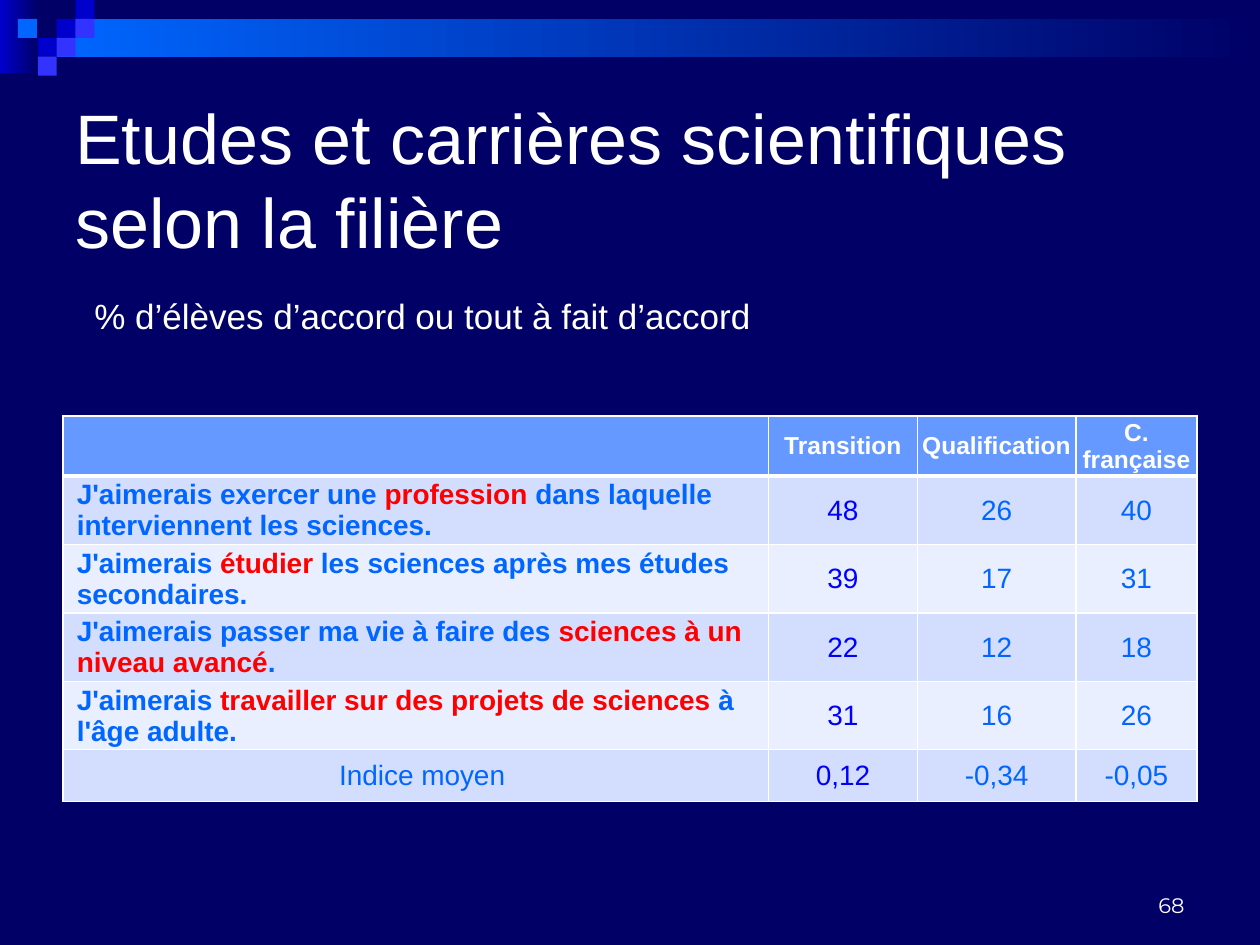
from dataclasses import dataclass

from lxml import etree
from pptx import Presentation
from pptx.dml.color import RGBColor
from pptx.enum.shapes import MSO_SHAPE
from pptx.enum.text import MSO_ANCHOR, PP_ALIGN
from pptx.oxml.ns import qn
from pptx.util import Inches, Pt

RECTANGLE = MSO_SHAPE.RECTANGLE
MIDDLE, BOTTOM = MSO_ANCHOR.MIDDLE, MSO_ANCHOR.BOTTOM
LEFT, CENTER, RIGHT = PP_ALIGN.LEFT, PP_ALIGN.CENTER, PP_ALIGN.RIGHT


@dataclass(frozen=True)
class Theme:
    night: str = "000066"
    navy: str = "0000CC"
    violet: str = "3333FF"
    azure: str = "0066FF"
    white: str = "FFFFFF"
    header: str = "6699FF"
    bands: tuple = ("D3DEFF", "EAEFFF")
    accent: str = "FF0000"
    strong: str = "0000FF"
    font: str = "Arial"
    number_font: str = "Montserrat"
    title_size: int = 40
    subtitle_size: int = 20
    header_size: int = 14
    body_size: int = 16
    number_size: int = 12


THEME = Theme()
WIDTH, HEIGHT = 10, 7.5
MARGIN = 0.05 * WIDTH
CONTENT_WIDTH = WIDTH - 2 * MARGIN
TILE = 0.15

# column, row, colour on the grid of small squares
TILES = [
    (3, 1, THEME.navy), (4, 0, THEME.navy), (4, 1, THEME.violet),
    (2, 2, THEME.navy), (0.95, 1, THEME.azure), (3, 2, THEME.violet),
    (2, 3, THEME.violet),
]

COLUMN_WIDTHS = [5.6, 1.18, 1.26, 0.96]
ROW_HEIGHTS = [0.43] + [0.5] * 4 + [0.41]
HEADINGS = ["Transition", "Qualification", "C. française"]
# statement as (before, highlighted, after), then one value per track
STATEMENTS = [
    (("J'aimerais exercer une ", "profession ",
      "dans laquelle interviennent les sciences."), ["48", "26", "40"]),
    (("J'aimerais ", "étudier",
      " les sciences après mes études secondaires."), ["39", "17", "31"]),
    (("J'aimerais passer ma vie à faire des ",
      "sciences à un niveau avancé", "."), ["22", "12", "18"]),
    (("J'aimerais ", "travailler sur des projets de sciences",
      " à l'âge adulte."), ["31", "16", "26"]),
]
MEAN_LABEL, MEAN_VALUES = "Indice moyen", ["0,12", "-0,34", "-0,05"]


def add_span(para, text, size, color=THEME.white, bold=False, font=THEME.font):
    span = para.add_run()
    span.text = text
    span.font.name = font
    span.font.size = Pt(size)
    span.font.bold = bold
    span.font.color.rgb = RGBColor.from_string(color)


def add_box(slide, left, top, width, height, anchor):
    frame = slide.shapes.add_textbox(
        Inches(left), Inches(top), Inches(width), Inches(height)).text_frame
    frame.word_wrap = True
    frame.vertical_anchor = anchor
    return frame


def add_block(slide, left, top, width, height, *colors):
    """Rectangle with one plain colour, or two for a horizontal gradient."""
    block = slide.shapes.add_shape(
        RECTANGLE, Inches(left), Inches(top), Inches(width), Inches(height))
    block.shadow.inherit = False
    block.line.fill.background()
    if len(colors) == 1:
        block.fill.solid()
        block.fill.fore_color.rgb = RGBColor.from_string(colors[0])
        return
    block.fill.gradient()
    block.fill.gradient_angle = 0
    for stop, position, color in zip(block.fill.gradient_stops, (0, 1), colors):
        stop.position = position
        stop.color.rgb = RGBColor.from_string(color)


def add_banner(slide):
    add_block(slide, 0, 0, 0.31, 0.58, THEME.navy, THEME.night)
    add_block(slide, 3 * TILE, TILE, WIDTH - 3 * TILE, 2 * TILE,
              THEME.azure, THEME.night)
    for column, row, color in TILES:
        add_block(slide, column * TILE, row * TILE, TILE, TILE, color)


def add_title(slide):
    frame = add_box(slide, MARGIN, 0.96, CONTENT_WIDTH, 0.2 * HEIGHT, MIDDLE)
    title = frame.paragraphs[0]
    add_span(title, "Etudes et carrières scientifiques selon la filière",
             THEME.title_size)
    subtitle = frame.add_paragraph()
    subtitle._p.get_or_add_pPr().set("marL", str(Inches(0.15)))
    subtitle.space_before = Pt(18)
    add_span(subtitle, "% d’élèves d’accord ou tout à fait d’accord",
             THEME.subtitle_size)


def set_borders(cell, **widths):
    """Draw white borders; sides are lnL, lnR, lnT and lnB, in points."""
    properties = cell._tc.get_or_add_tcPr()
    for index, (side, width) in enumerate(widths.items()):
        line = etree.Element(qn(f"a:{side}"), w=str(Pt(width)))
        fill = etree.SubElement(line, qn("a:solidFill"))
        etree.SubElement(fill, qn("a:srgbClr"), val=THEME.white)
        properties.insert(index, line)


def fill_cell(cell, spans, fill, align=CENTER, indent=0, top=1, bottom=1):
    """Write spans, a list of (text, format) pairs, into a filled cell."""
    cell.fill.solid()
    cell.fill.fore_color.rgb = RGBColor.from_string(fill)
    set_borders(cell, lnL=1, lnR=1, lnT=top, lnB=bottom)
    cell.vertical_anchor = MIDDLE
    cell.margin_left = cell.margin_right = cell.margin_top = Inches(0.01)
    cell.margin_bottom = 0
    para = cell.text_frame.paragraphs[0]
    para._p.get_or_add_pPr().set("marL", str(Inches(indent)))
    para.alignment = align
    for text, style in spans:
        add_span(para, text, **style)


def add_results(slide):
    table = slide.shapes.add_table(
        len(ROW_HEIGHTS), len(COLUMN_WIDTHS), Inches(MARGIN), Inches(3.3),
        Inches(CONTENT_WIDTH), Inches(sum(ROW_HEIGHTS))).table
    for column, width in zip(table.columns, COLUMN_WIDTHS):
        column.width = Inches(width)
    for row, height in zip(table.rows, ROW_HEIGHTS):
        row.height = Inches(height)

    heading = dict(size=THEME.header_size, bold=True)
    fill_cell(table.cell(0, 0), [], THEME.header, bottom=3)
    for column, text in enumerate(HEADINGS, 1):
        fill_cell(table.cell(0, column), [(text, heading)], THEME.header,
                  bottom=3)
    for column in (1, 2, 3):
        table.cell(0, column).margin_left = table.cell(0, column).margin_right = 0

    plain = dict(size=THEME.body_size, color=THEME.azure)
    bold = dict(plain, bold=True)
    marked = dict(bold, color=THEME.accent)
    strong = dict(plain, color=THEME.strong)
    rows = [(list(zip(parts, (bold, marked, bold))), LEFT, values)
            for parts, values in STATEMENTS]
    rows.append(([(MEAN_LABEL, plain)], CENTER, MEAN_VALUES))
    for row, (label, align, values) in enumerate(rows, 1):
        fill = THEME.bands[(row - 1) % 2]
        top = 3 if row == 1 else 1
        fill_cell(table.cell(row, 0), label, fill, align, indent=0.1, top=top)
        for column, value in enumerate(values, 1):
            style = strong if column == 1 else plain
            fill_cell(table.cell(row, column), [(value, style)], fill, top=top)


def add_page_number(slide):
    frame = add_box(slide, 7.17, 6.83, 2.33, 0.5, BOTTOM)
    para = frame.paragraphs[0]
    para.alignment = RIGHT
    add_span(para, "68", THEME.number_size, font=THEME.number_font)


def main():
    deck = Presentation()
    deck.slide_width, deck.slide_height = Inches(WIDTH), Inches(HEIGHT)
    page = deck.slides.add_slide(deck.slide_layouts[6])
    page.background.fill.solid()
    page.background.fill.fore_color.rgb = RGBColor.from_string(THEME.night)
    add_banner(page)
    add_title(page)
    add_results(page)
    add_page_number(page)
    deck.save("out.pptx")


if __name__ == "__main__":
    main()
